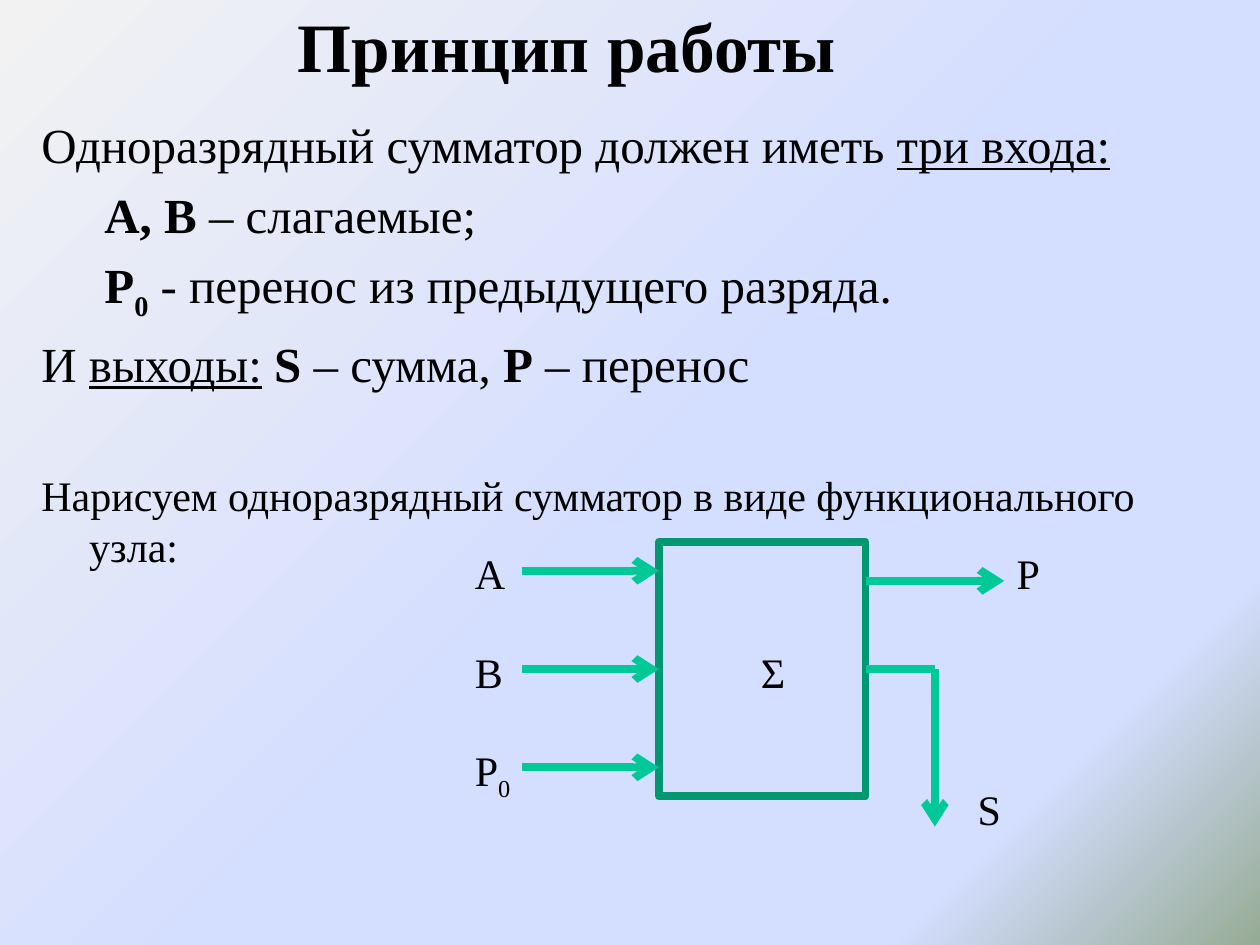
from dataclasses import dataclass

from lxml.etree import SubElement
from pptx import Presentation
from pptx.dml.color import RGBColor
from pptx.enum.shapes import MSO_CONNECTOR, MSO_SHAPE
from pptx.enum.text import MSO_ANCHOR, PP_ALIGN
from pptx.oxml.ns import qn
from pptx.util import Inches, Pt


@dataclass(frozen=True)
class Theme:
    font: str = "Times New Roman"
    text: RGBColor = RGBColor(0x00, 0x00, 0x00)
    box: RGBColor = RGBColor(0x00, 0x97, 0x71)
    arrow: RGBColor = RGBColor(0x00, 0xC8, 0x96)
    background: tuple = ((0, "F2F2F2"), (53, "D4DEFF"), (83, "D4DEFF"), (100, "96AB94"))
    title_size: float = 39.6
    body_size: int = 28
    label_size: int = 24
    line_width: float = 4.5


theme = Theme()


def add_runs(paragraph, runs, size):
    """Add (text, style) runs; the style holds any of b, u and s (subscript)."""
    for text, style in runs:
        run = paragraph.add_run()
        run.text = text
        run.font.name = theme.font
        run.font.size = Pt(size)
        run.font.color.rgb = theme.text
        run.font.bold = "b" in style
        run.font.underline = "u" in style
        if "s" in style:
            run.font._element.set("baseline", "-25000")


def add_line(start, end, arrow=True):
    x1, y1, x2, y2 = (Inches(value) for value in (*start, *end))
    connector = slide.shapes.add_connector(MSO_CONNECTOR.STRAIGHT, x1, y1, x2, y2)
    connector.line.color.rgb = theme.arrow
    connector.line.width = Pt(theme.line_width)
    if arrow:
        SubElement(connector.line._get_or_add_ln(), qn("a:tailEnd"), type="arrow")
    SubElement(connector._element.spPr, qn("a:effectLst"))
    return connector


presentation = Presentation()
presentation.slide_width = Inches(10)
presentation.slide_height = Inches(7.5)
slide = presentation.slides.add_slide(presentation.slide_layouts[5])

# Background gradient
fill = slide.background.fill
fill.gradient()
gradient = slide.background._cSld.find(".//" + qn("a:gradFill"))
for child in list(gradient):
    gradient.remove(child)
stops = SubElement(gradient, qn("a:gsLst"))
for position, color in theme.background:
    stop = SubElement(stops, qn("a:gs"), pos=str(position * 1000))
    SubElement(stop, qn("a:srgbClr"), val=color)
SubElement(gradient, qn("a:lin"), ang=str(45 * 60000), scaled="0")

# Title
title = slide.shapes.title
title.left, title.top, title.width, title.height = Inches(0), Inches(0), Inches(9), Inches(0.71)
title.text_frame.vertical_anchor = MSO_ANCHOR.MIDDLE
paragraph = title.text_frame.paragraphs[0]
paragraph.alignment = PP_ALIGN.CENTER
add_runs(paragraph, [("Принцип работы", "b")], theme.title_size)

# Body: first-line indent, space before, type size, runs
body_lines = [
    (-0.38, 6, theme.body_size, [("Одноразрядный сумматор должен иметь ", ""), ("три входа:", "u")]),
    (0.12, 6.5, theme.body_size, [("А, В ", "b"), ("– слагаемые;", "")]),
    (0.12, 6.5, theme.body_size,
     [("Р", "b"), ("0", "bs"), (" - перенос из предыдущего разряда.", "")]),
    (-0.38, 6.5, theme.body_size,
     [("И ", ""), ("выходы:", "u"), (" ", ""), ("S", "b"), (" – сумма, ", ""),
      ("Р", "b"), (" – перенос", "")]),
    (-0.38, 44.5, theme.label_size,
     [("Нарисуем одноразрядный сумматор в виде функционального узла:", "")]),
]
body = slide.shapes.add_textbox(Inches(0.23), Inches(0.86), Inches(9.45), Inches(5.78))
body.text_frame.word_wrap = True
for index, (indent, space, size, runs) in enumerate(body_lines):
    paragraph = body.text_frame.add_paragraph() if index else body.text_frame.paragraphs[0]
    paragraph.space_before = Pt(space)
    properties = paragraph._p.get_or_add_pPr()
    properties.set("marL", str(Inches(0.38)))
    properties.set("indent", str(Inches(indent)))
    add_runs(paragraph, runs, size)

# Adder block
left, top, width, height = 5.23, 4.3, 1.64, 2.02
right, middle = left + width, top + height / 2
adder = slide.shapes.add_shape(
    MSO_SHAPE.RECTANGLE, Inches(left), Inches(top), Inches(width), Inches(height))
adder.shadow.inherit = False
adder.fill.background()
adder.line.color.rgb = theme.box
adder.line.width = Pt(theme.line_width)

# Inputs
input_start, input_step = 4.14, 0.78
for row in (-1, 0, 1):
    y = middle + row * input_step
    connector = add_line((input_start, y), (left, y))
    if row == 0:
        connector.end_connect(adder, 1)

# Outputs
carry_y, sum_x, sum_end = 4.61, 7.42, 6.56
add_line((right, carry_y), (7.97, carry_y))
add_line((right, middle), (sum_x, middle), arrow=False).begin_connect(adder, 3)
add_line((sum_x, middle), (sum_x, sum_end))

# Labels
labels = [
    (5.94, 5.08, 0.39, [("Σ", "")]),
    (7.97, 4.3, 0.39, [("Р", "")]),
    (7.66, 6.17, 0.39, [("S", "")]),
    (3.67, 5.08, 0.39, [("B", "")]),
    (3.67, 4.3, 0.47, [("A", "")]),
    (3.67, 5.86, 0.62, [("P", ""), ("0", "s")]),
]
for x, y, label_width, runs in labels:
    label = slide.shapes.add_textbox(Inches(x), Inches(y), Inches(label_width), Inches(0.4))
    label.text_frame.word_wrap = True
    add_runs(label.text_frame.paragraphs[0], runs, theme.label_size)

presentation.save("out.pptx")
